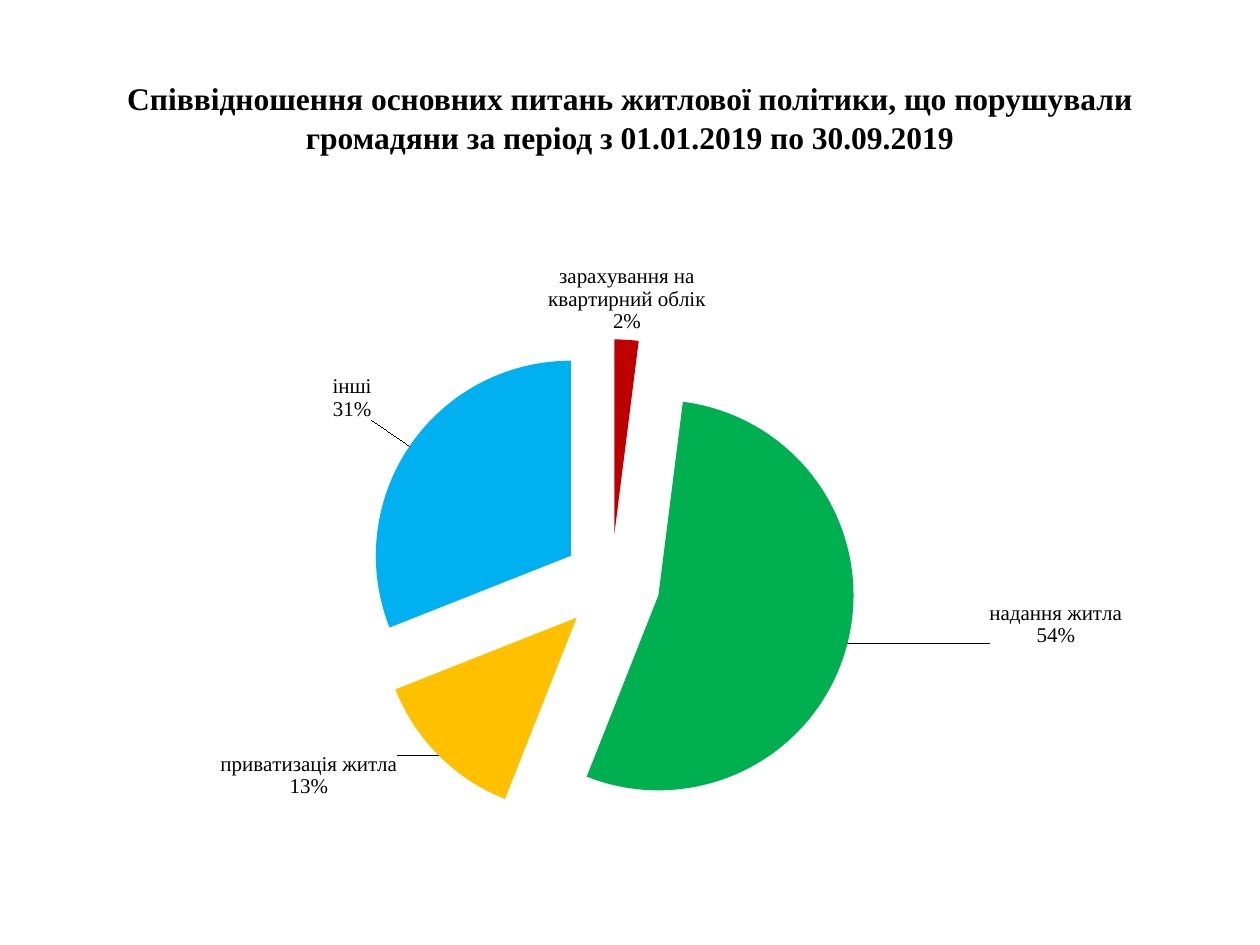
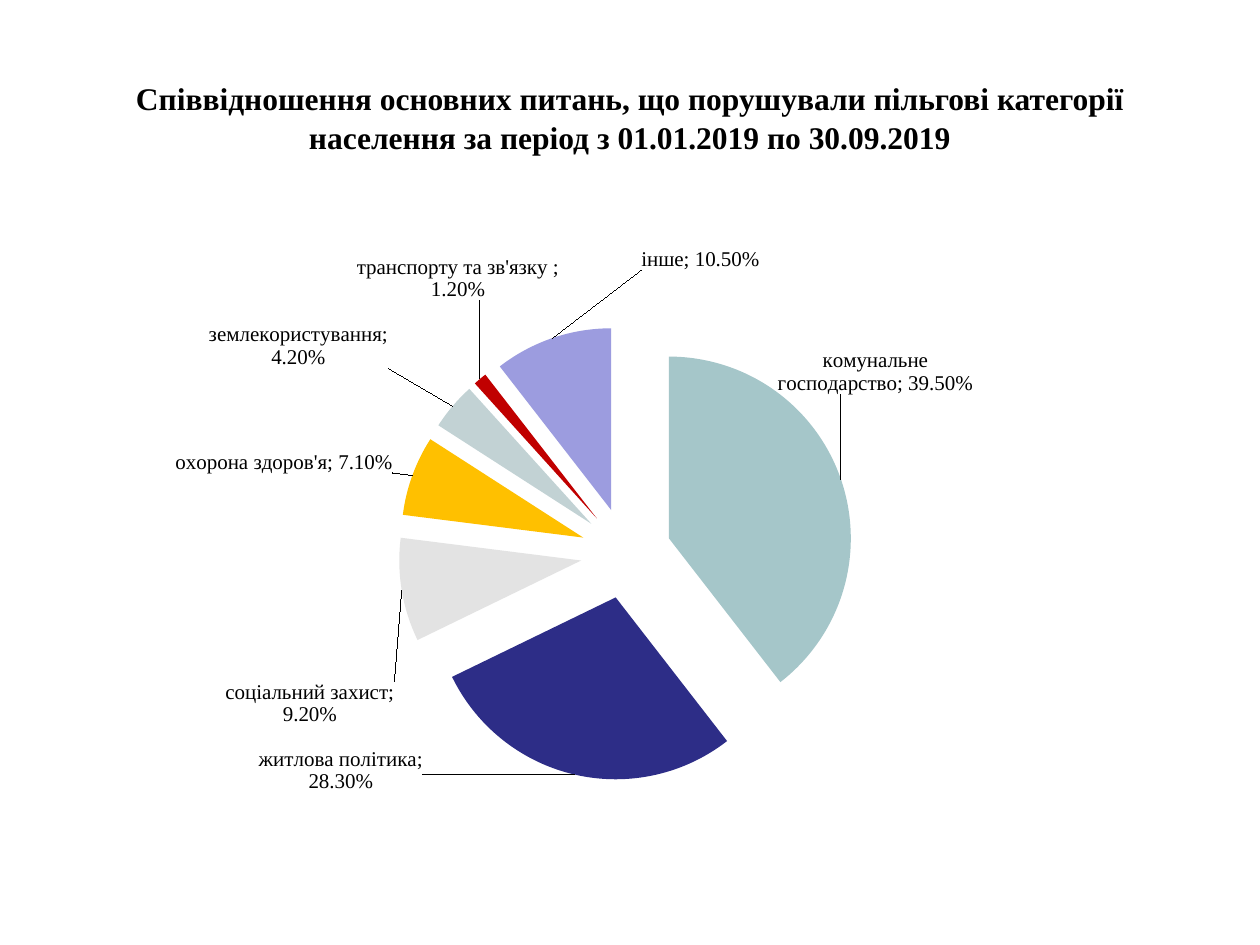
"""Build two slides with exploded pie charts about citizens' appeals."""
from copy import deepcopy

from lxml.etree import SubElement
from pptx import Presentation
from pptx.chart.data import CategoryChartData
from pptx.dml.color import RGBColor
from pptx.enum.chart import XL_CHART_TYPE, XL_LABEL_POSITION
from pptx.enum.text import MSO_ANCHOR, MSO_AUTO_SIZE, PP_ALIGN
from pptx.oxml.ns import qn
from pptx.util import Pt

COLORS = {
    "black": "000000", "white": "FFFFFF", "red": "C00000", "green": "00B050",
    "amber": "FFC000", "sky": "00B0F0", "teal": "A5C6C9", "navy": "2D2D87",
    "silver": "E3E3E3", "mist": "C2D2D4", "lilac": "9C9CDF",
}
TEXT_FONT = "Times New Roman"
TITLE_BOX = (36, 21.6, 648, 90)
CHART_LEFT, CHART_WIDTH, CHART_HEIGHT = 36, 648, 356.4
EXPLOSION = 25

# Slices are (category, value, colour, label shift in percent of the chart size).
SLIDES = [
    {
        "title": "Співвідношення основних питань житлової політики, що порушували "
                 "громадяни за період з 01.01.2019 по 30.09.2019",
        "chart_top": 149.76,
        "plot": (7.9, 12.4, 80.9, 78.2),
        "label": {"percent": True, "number_format": "0%", "separator": "\n"},
        "slices": [
            ("зарахування на квартирний облік", 2, "red", None),
            ("надання житла", 54, "green", (11.9, -7)),
            ("приватизація житла", 13, "amber", (-3.2, -1.3)),
            ("інші", 31, "sky", (-2.8, -3.5)),
        ],
    },
    {
        "title": "Співвідношення основних питань, що порушували пільгові категорії "
                 "населення за період з 01.01.2019 по 30.09.2019",
        "chart_top": 126,
        "plot": (12, 16.9, 75.3, 72.9),
        "label": {"percent": False, "number_format": "0.00%", "separator": "; "},
        "slices": [
            ("комунальне господарство", 0.395, "teal", (-6.2, -13.3)),
            ("житлова політика", 0.283, "navy", (-13.2, -5.4)),
            ("соціальний захист", 0.092, "silver", (0, 14.4)),
            ("охорона здоров'я", 0.071, "amber", (-1.1, 0)),
            ("землекористування", 0.042, "mist", (-5.2, -5.3)),
            ("транспорту та зв'язку ", 0.012, "red", (7.4, -11.7)),
            ("інше", 0.105, "lilac", (18.5, -9.8)),
        ],
    },
]


def rgb(name):
    """Return the named colour."""
    return RGBColor.from_string(COLORS[name])


def format_font(font, name=TEXT_FONT, size=12, bold=False):
    """Apply a black text format to a font."""
    font.name, font.size, font.bold = name, Pt(size), bold
    font.color.rgb = rgb("black")


def add_element(parent, tag, value=None):
    """Append a chart element, with a val attribute if one is given."""
    element = SubElement(parent, qn(f"c:{tag}"))
    if value is not None:
        element.set("val", str(value))
    return element


def add_layout(parent, **percents):
    """Append a manual layout whose measures are percents of the chart."""
    layout = add_element(parent, "layout")
    manual = add_element(layout, "manualLayout")
    if "w" in percents:
        add_element(manual, "layoutTarget", "inner")
        add_element(manual, "xMode", "edge")
        add_element(manual, "yMode", "edge")
    for tag, percent in percents.items():
        add_element(manual, tag, round(percent / 100, 3))
    return layout


def write_title(slide, text, **font_format):
    """Place and format the title placeholder."""
    title = slide.shapes.title
    title.left, title.top, title.width, title.height = map(Pt, TITLE_BOX)
    frame = title.text_frame
    frame.text = text
    frame.word_wrap = True
    frame.auto_size = MSO_AUTO_SIZE.NONE
    frame.vertical_anchor = MSO_ANCHOR.MIDDLE
    paragraph = frame.paragraphs[0]
    paragraph.alignment = PP_ALIGN.CENTER
    paragraph.line_spacing = 1.05
    format_font(paragraph.runs[0].font, **font_format)


def label_slices(series, slices, percent, number_format, separator):
    """Label every slice and shift the labels that have an offset."""
    labels = series.data_labels
    format_font(labels.font)
    labels.number_format = number_format
    labels.number_format_is_linked = False
    labels.position = XL_LABEL_POSITION.OUTSIDE_END
    labels.show_category_name = True
    labels.show_percentage = percent
    labels.show_value = not percent

    element = labels._element
    for leader in element.findall(qn("c:showLeaderLines")):
        element.remove(leader)
    add_element(element, "separator").text = separator
    shared_format = list(element)
    add_element(element, "showLeaderLines", 1)

    shifts = [(index, item[3]) for index, item in enumerate(slices) if item[3]]
    for place, (index, (x, y)) in enumerate(shifts):
        label = add_element(element, "dLbl")
        add_element(label, "idx", index)
        add_layout(label, x=x, y=y)
        label.extend(deepcopy(shared_format))
        element.insert(place, label)


def add_pie(slide, top, plot_box, slices, label):
    """Add an exploded pie chart with coloured, labelled slices."""
    data = CategoryChartData()
    data.categories = [item[0] for item in slices]
    data.add_series("Series 1", [item[1] for item in slices])
    box = map(Pt, (CHART_LEFT, top, CHART_WIDTH, CHART_HEIGHT))
    chart = slide.shapes.add_chart(XL_CHART_TYPE.PIE, *box, data).chart
    chart.has_legend = False
    chart.has_title = False
    format_font(chart.font, name="Arial", size=18)

    plot = chart.plots[0]
    plot.vary_by_categories = True
    series = plot.series[0]
    for index, item in enumerate(slices):
        fill = series.points[index].format.fill
        fill.solid()
        fill.fore_color.rgb = rgb(item[2])
    explosion = add_element(series._element, "explosion", EXPLOSION)
    series._element.find(qn("c:tx")).addnext(explosion)
    label_slices(series, slices, **label)

    plot_area = chart._chartSpace.chart.plotArea
    for layout in plot_area.findall(qn("c:layout")):
        plot_area.remove(layout)
    plot_area.insert(0, add_layout(plot_area, **dict(zip("xywh", plot_box))))


def main():
    """Build and save the presentation."""
    presentation = Presentation()
    presentation.slide_width, presentation.slide_height = Pt(720), Pt(540)
    for content in SLIDES:
        slide = presentation.slides.add_slide(presentation.slide_layouts[5])
        slide.background.fill.solid()
        slide.background.fill.fore_color.rgb = rgb("white")
        write_title(slide, content["title"], size=18, bold=True)
        add_pie(slide, content["chart_top"], content["plot"],
                content["slices"], content["label"])
    presentation.save("out.pptx")


if __name__ == "__main__":
    main()
